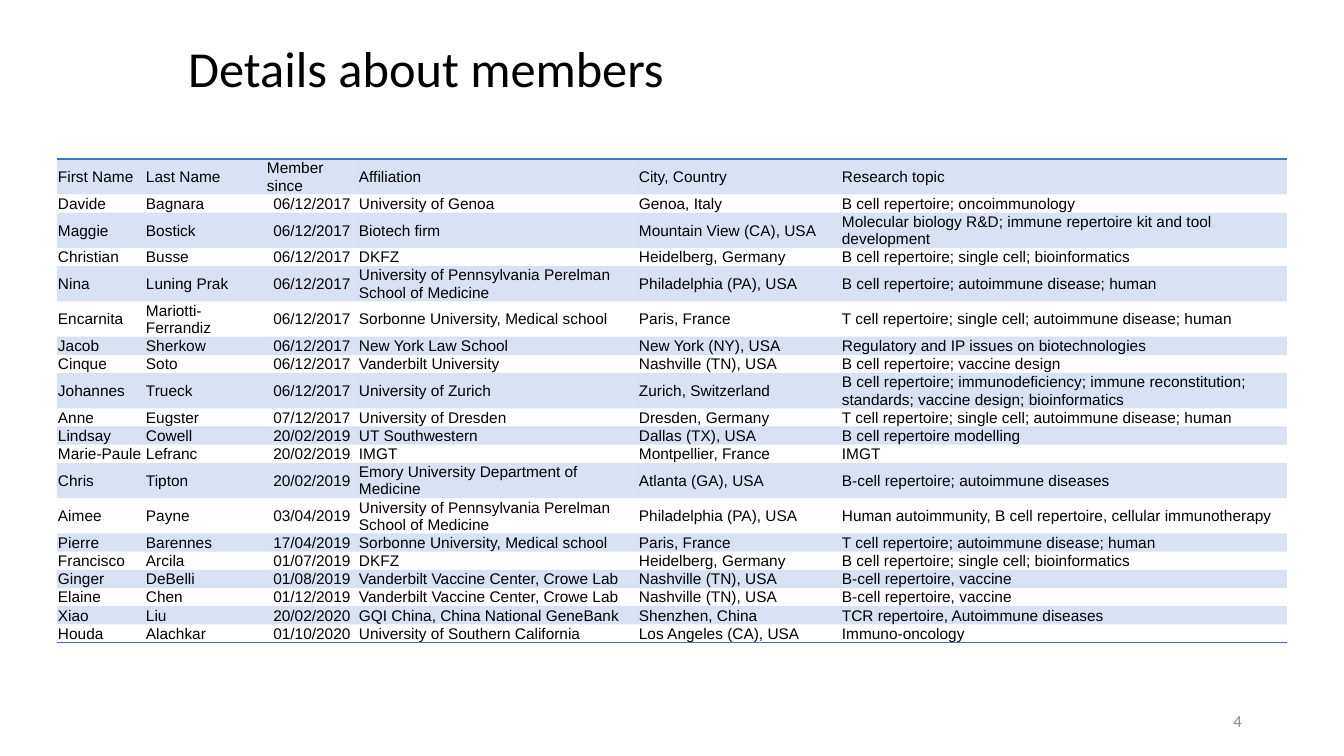
from lxml import etree
from pptx import Presentation
from pptx.dml.color import RGBColor
from pptx.enum.text import MSO_ANCHOR, MSO_AUTO_SIZE, PP_ALIGN
from pptx.oxml.ns import qn
from pptx.util import Pt

LEFT, CENTER, RIGHT = PP_ALIGN.LEFT, PP_ALIGN.CENTER, PP_ALIGN.RIGHT
TOP, MIDDLE = MSO_ANCHOR.TOP, MSO_ANCHOR.MIDDLE
NO_AUTOFIT = MSO_AUTO_SIZE.NONE
PX = 914400 / 100.8
NO_STYLE = "{2D5ABB26-0587-4C30-8999-92F81FD0307C}"

THEME = {
    "accent": RGBColor(0x44, 0x72, 0xC4),
    "band_alpha": "20000",
    "rule": Pt(1),
    "title": {"name": "Calibri", "size": Pt(36), "color": RGBColor(0, 0, 0)},
    "number": {"name": "Calibri", "size": Pt(12), "color": RGBColor(0x88, 0x88, 0x88)},
    "cell": {"name": "Arial", "size": Pt(11), "color": RGBColor(0, 0, 0)},
}

COLUMN_WIDTHS = [88, 121, 92, 280, 203, 446]
ROW_HEIGHT = 17
DATE_COLUMN = 2
MEMBERS = [
    ("First Name", "Last Name", "Member since", "Affiliation", "City, Country", "Research topic"),
    ("Davide", "Bagnara", "06/12/2017", "University of Genoa", "Genoa, Italy",
     "B cell repertoire; oncoimmunology"),
    ("Maggie", "Bostick", "06/12/2017", "Biotech firm", "Mountain View (CA), USA",
     "Molecular biology R&D; immune repertoire kit and tool development"),
    ("Christian", "Busse", "06/12/2017", "DKFZ", "Heidelberg, Germany",
     "B cell repertoire; single cell; bioinformatics"),
    ("Nina", "Luning Prak", "06/12/2017", "University of Pennsylvania Perelman School of Medicine",
     "Philadelphia (PA), USA", "B cell repertoire; autoimmune disease; human"),
    ("Encarnita", "Mariotti-Ferrandiz", "06/12/2017", "Sorbonne University, Medical school",
     "Paris, France", "T cell repertoire; single cell; autoimmune disease; human"),
    ("Jacob", "Sherkow", "06/12/2017", "New York Law School", "New York (NY), USA",
     "Regulatory and IP issues on biotechnologies"),
    ("Cinque", "Soto", "06/12/2017", "Vanderbilt University", "Nashville (TN), USA",
     "B cell repertoire; vaccine design"),
    ("Johannes", "Trueck", "06/12/2017", "University of Zurich", "Zurich, Switzerland",
     "B cell repertoire; immunodeficiency; immune reconstitution; standards; "
     "vaccine design; bioinformatics"),
    ("Anne", "Eugster", "07/12/2017", "University of Dresden", "Dresden, Germany",
     "T cell repertoire; single cell; autoimmune disease; human"),
    ("Lindsay", "Cowell", "20/02/2019", "UT Southwestern", "Dallas (TX), USA",
     "B cell repertoire modelling"),
    ("Marie-Paule", "Lefranc", "20/02/2019", "IMGT", "Montpellier, France", "IMGT"),
    ("Chris", "Tipton", "20/02/2019", "Emory University Department of Medicine",
     "Atlanta (GA), USA", "B-cell repertoire; autoimmune diseases"),
    ("Aimee", "Payne", "03/04/2019", "University of Pennsylvania Perelman School of Medicine",
     "Philadelphia (PA), USA", "Human autoimmunity, B cell repertoire, cellular immunotherapy"),
    ("Pierre", "Barennes", "17/04/2019", "Sorbonne University, Medical school", "Paris, France",
     "T cell repertoire; autoimmune disease; human"),
    ("Francisco", "Arcila", "01/07/2019", "DKFZ", "Heidelberg, Germany",
     "B cell repertoire; single cell; bioinformatics"),
    ("Ginger", "DeBelli", "01/08/2019", "Vanderbilt Vaccine Center, Crowe Lab",
     "Nashville (TN), USA", "B-cell repertoire, vaccine"),
    ("Elaine", "Chen", "01/12/2019", "Vanderbilt Vaccine Center, Crowe Lab",
     "Nashville (TN), USA", "B-cell repertoire, vaccine"),
    ("Xiao", "Liu", "20/02/2020", "GQI China, China National GeneBank", "Shenzhen, China",
     "TCR repertoire, Autoimmune diseases"),
    ("Houda", "Alachkar", "01/10/2020", "University of Southern California",
     "Los Angeles (CA), USA", "Immuno-oncology"),
]


def px(length):
    return round(length * PX)


def write(frame, text, style, alignment):
    para = frame.paragraphs[0]
    para.alignment = alignment
    span = para.add_run()
    span.text = text
    for name, value in THEME[style].items():
        if name == "color":
            span.font.color.rgb = value
        else:
            setattr(span.font, name, value)


deck = Presentation()
deck.slide_width, deck.slide_height = px(1344), px(756)
page = deck.slides.add_slide(deck.slide_layouts[5])

title = page.shapes.title
number = page.shapes.add_textbox(0, 0, 0, 0)
for box, bounds, text, style, alignment, anchor in [
    (title, (178, 32, 1066, 72), "Details about members", "title", LEFT, TOP),
    (number, (950, 701, 302, 40), "4", "number", RIGHT, MIDDLE),
]:
    box.left, box.top, box.width, box.height = map(px, bounds)
    box.text_frame.word_wrap = True
    box.text_frame.auto_size = NO_AUTOFIT
    box.text_frame.vertical_anchor = anchor
    write(box.text_frame, text, style, alignment)

table_frame = page.shapes.add_table(
    len(MEMBERS), len(COLUMN_WIDTHS), px(57), px(159),
    px(sum(COLUMN_WIDTHS)), px(ROW_HEIGHT * len(MEMBERS)))
table = table_frame.table
table.first_row = table.horz_banding = False
next(table_frame._element.iter(qn("a:tableStyleId"))).text = NO_STYLE
for column, width in zip(table.columns, COLUMN_WIDTHS):
    column.width = px(width)

cell_format = {"margin_left": px(1), "margin_top": px(1), "margin_right": px(1),
               "margin_bottom": 0, "vertical_anchor": MIDDLE}
border_edges = {0: "a:lnT", len(MEMBERS) - 1: "a:lnB"}
for row_index, member in enumerate(MEMBERS):
    table.rows[row_index].height = px(ROW_HEIGHT)
    for column_index, text in enumerate(member):
        cell = table.cell(row_index, column_index)
        for name, value in cell_format.items():
            setattr(cell, name, value)
        is_date = row_index > 0 and column_index == DATE_COLUMN
        write(cell.text_frame, text, "cell", CENTER if is_date else LEFT)
        properties = cell._tc.get_or_add_tcPr()
        if row_index % 2 == 0:
            cell.fill.solid()
            cell.fill.fore_color.rgb = THEME["accent"]
            color = next(properties.iter(qn("a:srgbClr")))
            etree.SubElement(color, qn("a:alpha"), val=THEME["band_alpha"])
        else:
            cell.fill.background()
        if row_index in border_edges:
            edge = etree.Element(qn(border_edges[row_index]), w=str(THEME["rule"]))
            line_fill = etree.SubElement(edge, qn("a:solidFill"))
            etree.SubElement(line_fill, qn("a:srgbClr"), val=str(THEME["accent"]))
            properties.insert(0, edge)

deck.save("out.pptx")
